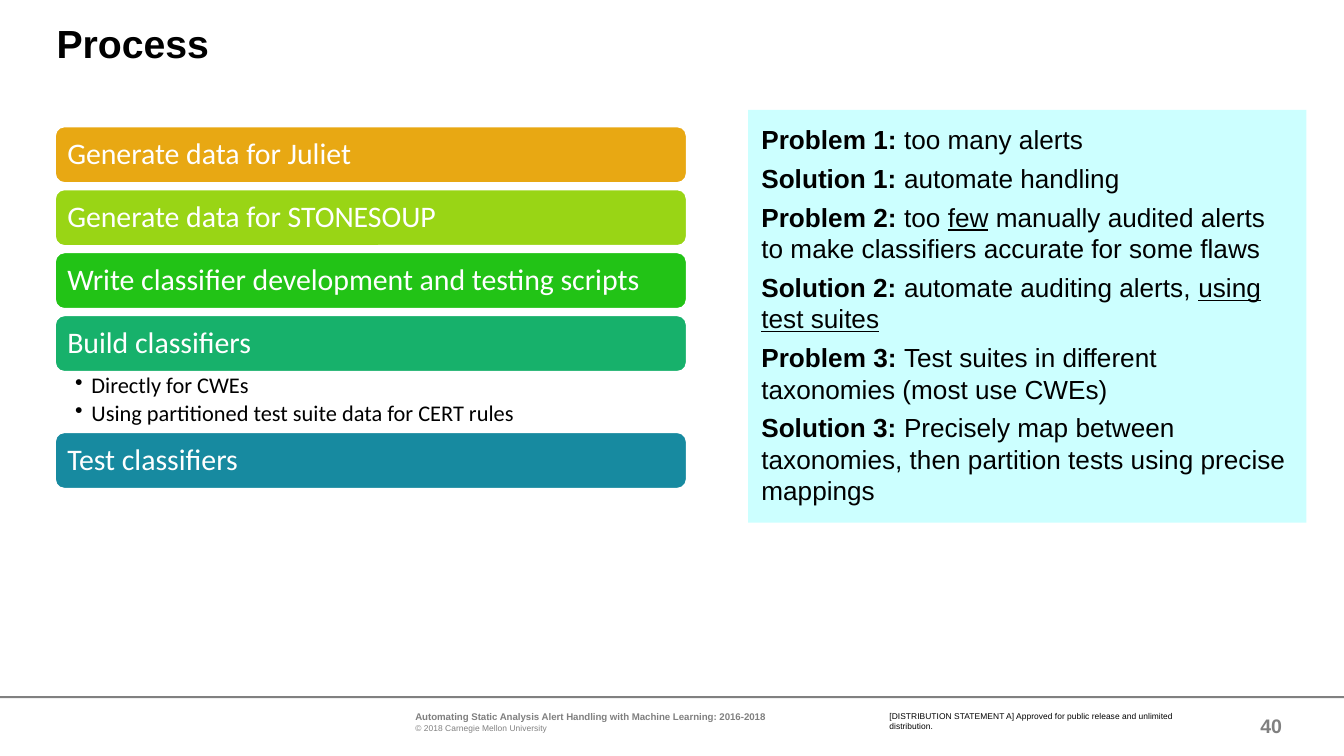
from dataclasses import dataclass

import pptx
import pptx.dml.color
import pptx.enum.shapes
import pptx.enum.text
import pptx.oxml.ns
import pptx.util
from lxml import etree

Cm = pptx.util.Cm
Pt = pptx.util.Pt
Align = pptx.enum.text.PP_ALIGN
Anchor = pptx.enum.text.MSO_ANCHOR
Preset = pptx.enum.shapes.MSO_SHAPE

COLOURS = {
    "black": "000000", "white": "FFFFFF", "grey": "808080", "panel": "CCFFFF",
    "amber": "E8A813", "lime": "99D515", "green": "22C316",
    "emerald": "17B16B", "teal": "178AA0",
}


@dataclass(frozen=True)
class Box:
    left: float
    top: float
    width: float
    height: float


@dataclass(frozen=True)
class Style:
    size: float
    font: str = "Arial"
    colour: str = "black"
    bold: bool = False


@dataclass(frozen=True)
class Step:
    label: str
    colour: str
    details: tuple[str, ...] = ()


@dataclass(frozen=True)
class Point:
    heading: str
    before: str
    underlined: str = ""
    after: str = ""


STEPS = [
    Step("Generate data for Juliet", "amber"),
    Step("Generate data for STONESOUP", "lime"),
    Step("Write classifier development and testing scripts", "green"),
    Step("Build classifiers", "emerald",
         ("Directly for CWEs", "Using partitioned test suite data for CERT rules")),
    Step("Test classifiers", "teal"),
]
POINTS = [
    Point("Problem 1: ", "too many alerts"),
    Point("Solution 1: ", "automate handling"),
    Point("Problem 2: ", "too ", "few",
          " manually audited alerts to make classifiers accurate for some flaws"),
    Point("Solution 2: ", "automate auditing alerts, ", "using test suites"),
    Point("Problem 3: ", "Test suites in different taxonomies (most use CWEs)"),
    Point("Solution 3: ", "Precisely map between taxonomies, "
          "then partition tests using precise mappings"),
]
BAR_LEFT, BAR_TOP, BAR_WIDTH, BAR_HEIGHT, BAR_GAP = 1.04, 2.39, 11.94, 1.07, 0.12
DETAILS_HEIGHT = 1.14


def colour(name: str) -> pptx.dml.color.RGBColor:
    return pptx.dml.color.RGBColor.from_string(COLOURS[name])


def place(box: Box) -> tuple:
    return Cm(box.left), Cm(box.top), Cm(box.width), Cm(box.height)


def set_frame(shape, margins=(0, 0, 0, 0), anchor=Anchor.TOP):
    frame = shape.text_frame
    frame.word_wrap = True
    frame.vertical_anchor = anchor
    (frame.margin_left, frame.margin_top,
     frame.margin_right, frame.margin_bottom) = (Cm(margin) for margin in margins)
    return frame


def add_text_box(slide, box: Box, margins=(0, 0, 0, 0), anchor=Anchor.TOP):
    return set_frame(slide.shapes.add_textbox(*place(box)), margins, anchor)


def add_filled_shape(slide, preset, box: Box, fill: str, line: str = ""):
    shape = slide.shapes.add_shape(preset, *place(box))
    shape.shadow.inherit = False
    shape.fill.solid()
    shape.fill.fore_color.rgb = colour(fill)
    if line:
        shape.line.color.rgb = colour(line)
        shape.line.width = Pt(1)
    else:
        shape.line.fill.background()
    return shape


def next_paragraph(frame, first: bool, alignment=Align.LEFT):
    paragraph = frame.paragraphs[0] if first else frame.add_paragraph()
    paragraph.alignment = alignment
    return paragraph


def add_run(paragraph, text: str, style: Style, underline: bool = False) -> None:
    run = paragraph.add_run()
    run.text = text
    run.font.name = style.font
    run.font.size = Pt(style.size)
    run.font.bold = style.bold
    run.font.underline = underline
    run.font.color.rgb = colour(style.colour)


def add_bullet(paragraph, indent: float) -> None:
    properties = paragraph._p.get_or_add_pPr()
    properties.set("marL", str(Cm(indent)))
    properties.set("indent", str(-Cm(indent)))
    bullet = etree.SubElement(properties, pptx.oxml.ns.qn("a:buChar"))
    bullet.set("char", "•")


def add_step(slide, step: Step, top: float) -> float:
    """Draw a step with its details and return the top of the next one."""
    bar = add_filled_shape(slide, Preset.ROUNDED_RECTANGLE,
                           Box(BAR_LEFT, top, BAR_WIDTH, BAR_HEIGHT), step.colour, "white")
    frame = set_frame(bar, (0.18, 0.18, 0.18, 0.18), Anchor.MIDDLE)
    paragraph = next_paragraph(frame, True)
    paragraph.line_spacing = 0.9
    add_run(paragraph, step.label, Style(16, "Calibri", "white"))
    bottom = top + BAR_HEIGHT
    if not step.details:
        return bottom + BAR_GAP
    frame = add_text_box(slide, Box(BAR_LEFT, bottom, BAR_WIDTH, DETAILS_HEIGHT),
                         (0.38, 0.05, 0.3, 0.05))
    for index, detail in enumerate(step.details):
        paragraph = next_paragraph(frame, index == 0)
        paragraph.line_spacing = 0.9
        paragraph.space_after = Pt(2)
        add_bullet(paragraph, 0.31)
        add_run(paragraph, detail, Style(12, "Calibri"))
    return bottom + DETAILS_HEIGHT


def add_points(slide, points: list[Point]) -> None:
    panel = add_filled_shape(slide, Preset.RECTANGLE, Box(14.14, 2.08, 10.55, 7.8), "panel")
    frame = set_frame(panel, (0.25, 0.25, 0.25, 0.25))
    for index, point in enumerate(points):
        paragraph = next_paragraph(frame, index == 0)
        paragraph.space_before = Pt(2 if index else 0)
        paragraph.space_after = Pt(2)
        add_run(paragraph, point.heading, Style(14, bold=True))
        for text in (point.before, point.underlined, point.after):
            if text:
                add_run(paragraph, text, Style(14), underline=text == point.underlined)


def add_footer(slide) -> None:
    add_filled_shape(slide, Preset.RECTANGLE, Box(0, 13.16, 25.4, 0.04), "grey")
    frame = add_text_box(slide, Box(7.85, 13.44, 8.56, 0.41))
    add_run(next_paragraph(frame, True),
            "Automating Static Analysis Alert Handling with Machine Learning: 2016-2018",
            Style(5.2, colour="grey", bold=True))
    add_run(next_paragraph(frame, False), "© 2018 Carnegie Mellon University",
            Style(4.5, colour="grey"))
    frame = add_text_box(slide, Box(16.81, 13.44, 5.82, 0.38))
    add_run(next_paragraph(frame, True),
            "[DISTRIBUTION STATEMENT A] Approved for public release and unlimited distribution.",
            Style(4.5))
    frame = add_text_box(slide, Box(23.11, 13.34, 1.12, 0.76), anchor=Anchor.MIDDLE)
    add_run(next_paragraph(frame, True, Align.RIGHT), "40",
            Style(10.5, colour="grey", bold=True))


def main() -> None:
    presentation = pptx.Presentation()
    presentation.slide_width, presentation.slide_height = Cm(25.4), Cm(14.29)
    slide = presentation.slides.add_slide(presentation.slide_layouts[6])

    add_footer(slide)

    # Process steps on the left
    top = BAR_TOP
    for step in STEPS:
        top = add_step(slide, step, top)

    # Title
    title = next_paragraph(add_text_box(slide, Box(1.07, 0.46, 20.09, 1.63)), True)
    title.line_spacing = 0.9
    add_run(title, "Process", Style(21, bold=True))

    # Problems and solutions on the right
    add_points(slide, POINTS)
    presentation.save("out.pptx")


if __name__ == "__main__":
    main()
